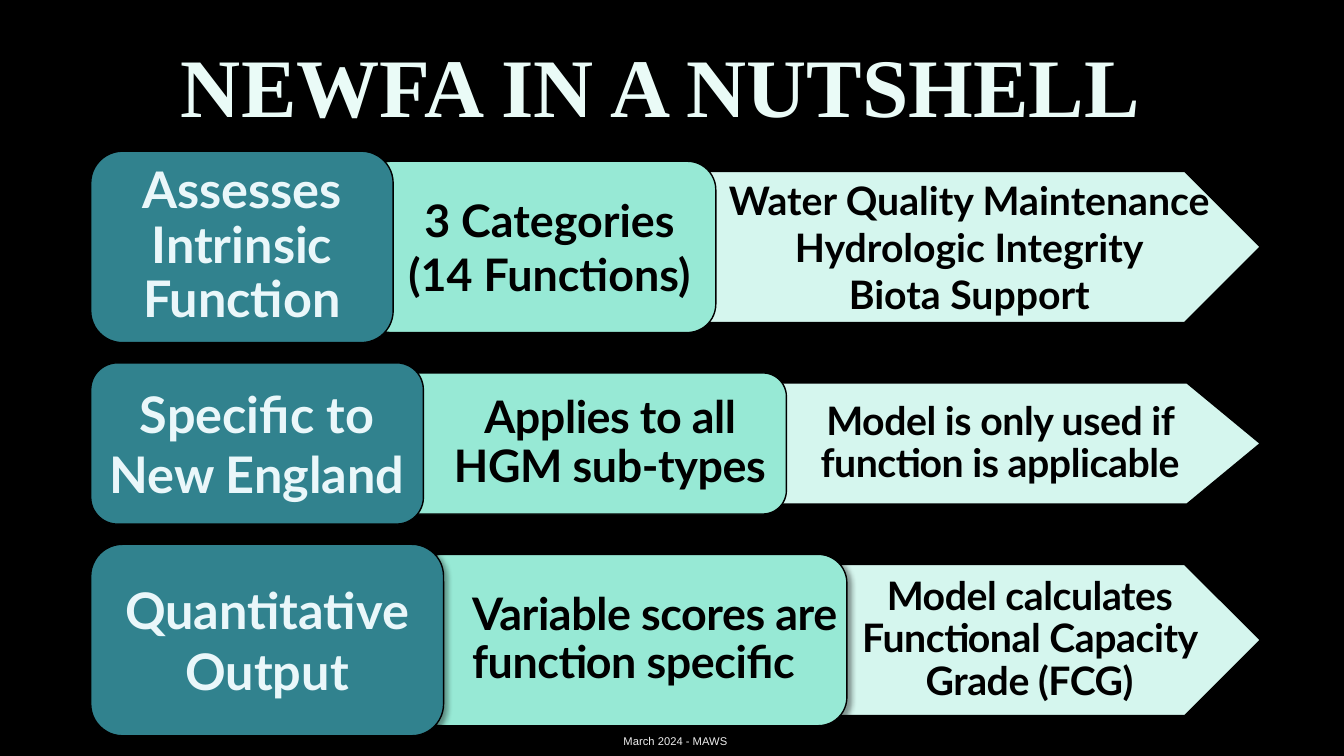
"""Build the NEWFA summary slide: three rows of overlapping boxes ending in an arrow."""
from dataclasses import dataclass

import pptx
import pptx.dml.color
import pptx.enum.shapes
import pptx.enum.text
import pptx.oxml
import pptx.oxml.ns
import pptx.slide
import pptx.text.text
import pptx.util

RGBColor = pptx.dml.color.RGBColor
ALIGN = pptx.enum.text.PP_ALIGN
SHAPE = pptx.enum.shapes.MSO_SHAPE

EMU_PER_PX = 9144
BLACK = RGBColor(0x00, 0x00, 0x00)
TEAL = RGBColor(0x31, 0x82, 0x8E)
MINT = RGBColor(0x97, 0xE9, 0xD5)
PALE_MINT = RGBColor(0xD5, 0xF6, 0xEE)
ICE = RGBColor(0xEA, 0xF7, 0xFA)
TITLE_ICE = RGBColor(0xEA, 0xFB, 0xF7)

DRAWING_NS = pptx.oxml.ns.nsdecls("a")
SHADOW_XML = (
    f'<a:outerShdw {DRAWING_NS} blurRad="50800" dist="38100" dir="2700000" algn="tl" rotWithShape="0">'
    '<a:srgbClr val="000000"><a:alpha val="40000"/></a:srgbClr></a:outerShdw>'
)
FOOTER_GRADIENT_XML = (
    f'<a:gradFill {DRAWING_NS}><a:gsLst>'
    '<a:gs pos="0"><a:srgbClr val="9E9E9E"/></a:gs>'
    '<a:gs pos="28000"><a:srgbClr val="EDEDED"/></a:gs>'
    '<a:gs pos="100000"><a:srgbClr val="FFFFFF"/></a:gs>'
    '</a:gsLst><a:lin ang="5400000" scaled="0"/></a:gradFill>'
)


@dataclass(frozen=True)
class BoxStyle:
    """Look shared by all boxes of one column."""

    preset: SHAPE
    fill: RGBColor
    text: RGBColor
    size: int
    inset_y: int


@dataclass(frozen=True)
class Box:
    """One box of a row; lengths are in px."""

    style: BoxStyle
    left: int
    right: int
    lines: tuple[str, ...]
    inset_left: int = 0
    inset_right: int = 0
    line_spacing: float | None = 0.9
    tracking: int = 0
    align: ALIGN = ALIGN.CENTER
    point: float = 0.5


@dataclass(frozen=True)
class Row:
    """A row of boxes listed from back to front."""

    top: int
    height: int
    boxes: tuple[Box, ...]
    shadow: bool = False


ARROW = BoxStyle(SHAPE.PENTAGON, PALE_MINT, BLACK, 28, 20)
DETAIL = BoxStyle(SHAPE.ROUNDED_RECTANGLE, MINT, BLACK, 32, 10)
TOPIC = BoxStyle(SHAPE.ROUNDED_RECTANGLE, TEAL, ICE, 36, 0)
ROW_LEFT, ROW_RIGHT = 90, 1250

ROWS = (
    Row(150, 190, (
        Box(ARROW, 700, ROW_RIGHT,
            ("Water Quality Maintenance", "Hydrologic Integrity", "Biota Support"),
            inset_left=20, inset_right=10, line_spacing=None),
        Box(DETAIL, 360, 710, ("3 Categories", "(14 Functions)"),
            inset_left=30, inset_right=10, line_spacing=None),
        Box(TOPIC, ROW_LEFT, 390, ("Assesses Intrinsic Function",)),
    )),
    Row(360, 160, (
        Box(ARROW, 770, ROW_RIGHT, ("Model is only used if function is applicable",),
            tracking=-30, point=0.605),
        Box(DETAIL, 390, 780, ("Applies to all HGM sub-types",), inset_left=40, tracking=-30),
        Box(TOPIC, ROW_LEFT, 420, ("Specific to New England",), line_spacing=None),
    )),
    Row(540, 190, (
        Box(ARROW, 820, ROW_RIGHT, ("Model calculates Functional Capacity Grade (FCG)",),
            inset_left=10, tracking=-30),
        Box(DETAIL, 410, 840, ("Variable scores are function specific",),
            inset_left=50, tracking=-30, align=ALIGN.LEFT),
        Box(TOPIC, ROW_LEFT, 440, ("Quantitative Output",), line_spacing=None),
    ), shadow=True),
)


def px(value: int) -> pptx.util.Emu:
    """Turn px into EMU."""
    return pptx.util.Emu(value * EMU_PER_PX)


def prepare_frame(frame: pptx.text.text.TextFrame, left: int = 0, right: int = 0) -> None:
    """Wrap and centre the text vertically within the given side insets."""
    frame.word_wrap = True
    frame.auto_size = pptx.enum.text.MSO_AUTO_SIZE.NONE
    frame.vertical_anchor = pptx.enum.text.MSO_ANCHOR.MIDDLE
    frame.margin_left, frame.margin_right = px(left), px(right)
    frame.margin_top = frame.margin_bottom = 0


def format_run(run: pptx.text.text._Run, name: str, size: float,
               color: RGBColor | None = None) -> None:
    """Set font, size and, where a colour is given, bold coloured text."""
    run.font.name = name
    run.font.size = pptx.util.Pt(size)
    if color is not None:
        run.font.bold = True
        run.font.color.rgb = color


def draw_box(slide: pptx.slide.Slide, row: Row, box: Box) -> None:
    """Draw one box with its text."""
    style = box.style
    shape = slide.shapes.add_shape(
        style.preset, px(box.left), px(row.top + style.inset_y),
        px(box.right - box.left), px(row.height - 2 * style.inset_y))
    if style is ARROW:
        shape.adjustments[0] = box.point
    shape.fill.solid()
    shape.fill.fore_color.rgb = style.fill
    shape.line.color.rgb = BLACK
    shape.line.width = pptx.util.Pt(1)
    shape.shadow.inherit = False
    if row.shadow:
        effects = shape._element.spPr.find(pptx.oxml.ns.qn("a:effectLst"))
        effects.append(pptx.oxml.parse_xml(SHADOW_XML))

    frame = shape.text_frame
    frame.text = "\n".join(box.lines)
    prepare_frame(frame, box.inset_left, box.inset_right)
    for paragraph in frame.paragraphs:
        paragraph.alignment = box.align
        paragraph.line_spacing = box.line_spacing
        for run in paragraph.runs:
            format_run(run, "Lato", style.size, style.text)
            if box.tracking:
                run._r.get_or_add_rPr().set("spc", str(box.tracking))


def draw_title(slide: pptx.slide.Slide) -> None:
    """Place and format the title placeholder."""
    title = slide.shapes.title
    title.left, title.top, title.width, title.height = px(140), px(40), px(1030), px(100)
    title.text_frame.text = "NEWFA IN A NUTSHELL"
    prepare_frame(title.text_frame)
    paragraph = title.text_frame.paragraphs[0]
    paragraph.alignment = ALIGN.CENTER
    paragraph.line_spacing = 0.9
    format_run(paragraph.runs[0], "Times New Roman", 59.4, TITLE_ICE)
    paragraph.runs[0]._r.get_or_add_rPr().set("cap", "small")


def draw_footer(slide: pptx.slide.Slide) -> None:
    """Add the footer with its gradient text."""
    footer = slide.shapes.add_textbox(px(600), px(720), px(140), px(30))
    footer.text_frame.text = "March 2024 - MAWS"
    prepare_frame(footer.text_frame)
    paragraph = footer.text_frame.paragraphs[0]
    paragraph.alignment = ALIGN.CENTER
    format_run(paragraph.runs[0], "Arial", 8)
    paragraph.runs[0]._r.get_or_add_rPr().insert(0, pptx.oxml.parse_xml(FOOTER_GRADIENT_XML))


def main() -> None:
    """Build and save the presentation."""
    presentation = pptx.Presentation()
    presentation.slide_width, presentation.slide_height = px(1333), px(750)
    slide = presentation.slides.add_slide(presentation.slide_layouts.get_by_name("Title Only"))
    slide.background.fill.solid()
    slide.background.fill.fore_color.rgb = BLACK
    draw_title(slide)
    for row in ROWS:
        for box in row.boxes:
            draw_box(slide, row, box)
    draw_footer(slide)
    presentation.save("out.pptx")


if __name__ == "__main__":
    main()
